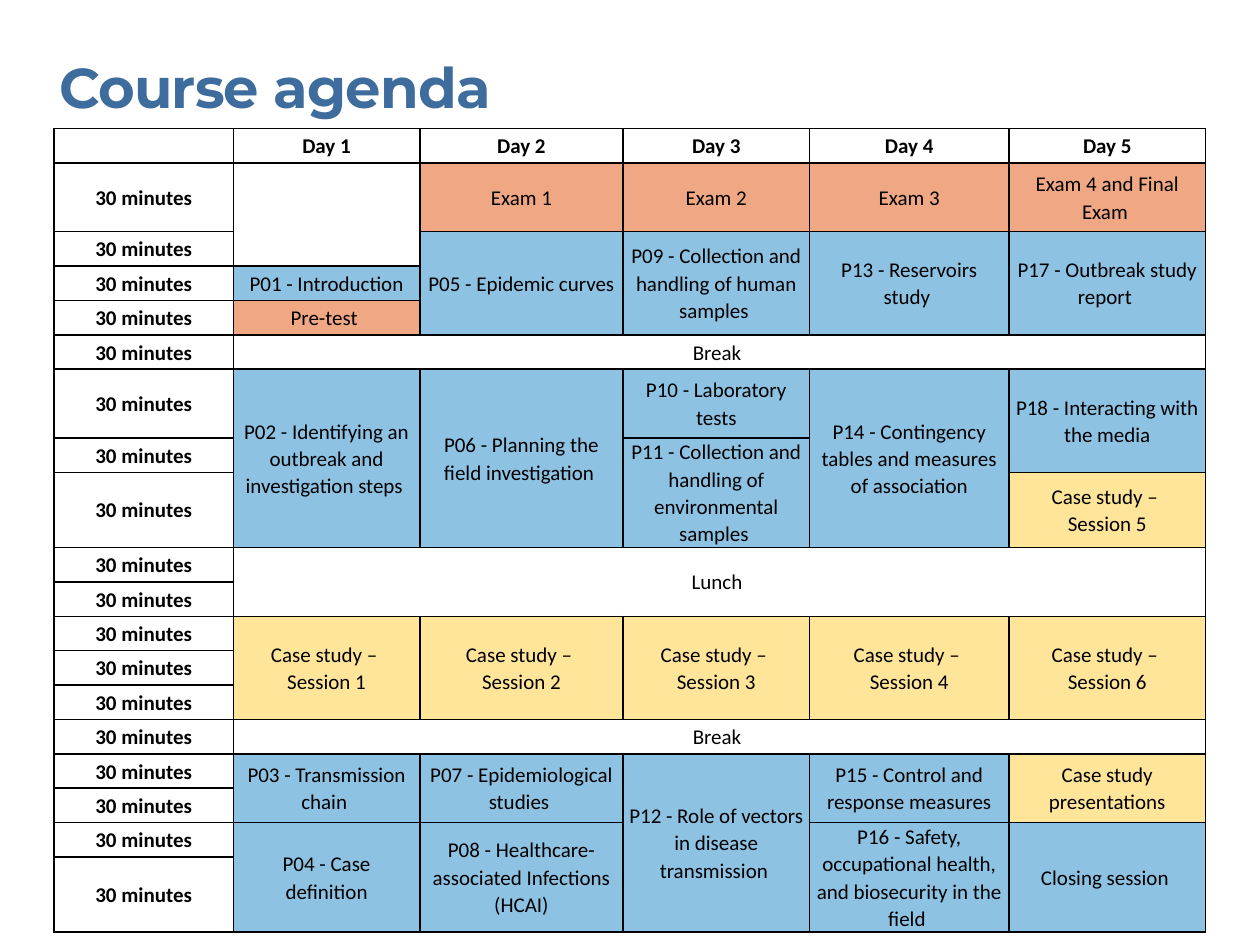
from lxml import etree
from pptx import Presentation
from pptx.dml.color import RGBColor
from pptx.enum.text import MSO_ANCHOR, PP_ALIGN
from pptx.oxml.ns import qn
from pptx.util import Inches, Pt

LEFT, CENTER = PP_ALIGN.LEFT, PP_ALIGN.CENTER
TOP, MIDDLE = MSO_ANCHOR.TOP, MSO_ANCHOR.MIDDLE
TITLE_ONLY = 5

BLACK, WHITE, TITLE_BLUE = "000000", "FFFFFF", "3D6C9D"
EXAM, LESSON, CASE = "F0A884", "8DC2E3", "FFE599"

TITLE_BOX = (0.47, 0.42, 8.55, 0.54)
TABLE_BOX = (0.43, 1.02, 9.14, 6.08)
COLUMN_SHARES = [1.42, 1.48, 1.61, 1.48, 1.58, 1.56]
ROW_SHARES = [1, 2, 1, 1, 1, 1, 2, 1, 2] + [1] * 9 + [1.28]
SLOT = "30 minutes"

MORNING = [
    [(2, None, ""), (1, LESSON, "P01 - Introduction"), (1, EXAM, "Pre-test ")],
    [(1, EXAM, "Exam 1"), (3, LESSON, "P05 - Epidemic curves")],
    [(1, EXAM, "Exam 2"), (3, LESSON, "P09 - Collection and handling of human samples ")],
    [(1, EXAM, "Exam 3"), (3, LESSON, "P13 - Reservoirs study ")],
    [(1, EXAM, "Exam 4 and Final Exam "), (3, LESSON, "P17 - Outbreak study report ")],
]
LATE_MORNING = [
    [(3, LESSON, "P02 - Identifying an outbreak and investigation steps ")],
    [(3, LESSON, "P06 - Planning the field investigation ")],
    [(1, LESSON, "P10 - Laboratory tests"),
     (2, LESSON, "P11 - Collection and handling of environmental samples ")],
    [(3, LESSON, "P14 - Contingency tables and measures of association")],
    [(2, LESSON, "P18 - Interacting with the media"),
     (1, CASE, "Case study – \nSession 5")],
]
CASE_STUDIES = [[(3, CASE, f"Case study – \nSession {number}")] for number in (1, 2, 3, 4, 6)]
LATE_AFTERNOON = [
    [(2, LESSON, "P03 - Transmission chain "), (2, LESSON, "P04 - Case definition")],
    [(2, LESSON, "P07 - Epidemiological studies "),
     (2, LESSON, "P08 - Healthcare-associated Infections (HCAI)")],
    [(4, LESSON, "P12 - Role of vectors in disease transmission ")],
    [(2, LESSON, "P15 - Control and response measures"),
     (2, LESSON, "P16 - Safety, occupational health, and biosecurity in the field ")],
    [(2, CASE, "Case study presentations"), (2, LESSON, "Closing session ")],
]
BLOCKS = [
    MORNING,
    [[(1, None, "Break ")]],
    LATE_MORNING,
    [[(2, None, "Lunch ")]],
    CASE_STUDIES,
    [[(1, None, "Break ")]],
    LATE_AFTERNOON,
]


def color(value):
    """Turn a hex string into a colour."""
    return RGBColor.from_string(value)


def write_text(frame, text, font="Calibri", size=12, bold=False, fill=BLACK,
               align=CENTER, line_spacing=1.07, tracking=None):
    """Write text into a frame, one paragraph for each line."""
    for index, line in enumerate(text.split("\n")):
        paragraph = frame.add_paragraph() if index else frame.paragraphs[0]
        paragraph.alignment = align
        paragraph.line_spacing = line_spacing
        if not line:
            continue
        run = paragraph.add_run()
        run.text = line
        run.font.name = font
        run.font.size = Pt(size)
        run.font.bold = bold
        run.font.color.rgb = color(fill)
        if tracking is not None:
            run.font._element.set("spc", str(int(tracking * 100)))


def place_title(slide, box):
    """Move the title placeholder into its box and format it."""
    title = slide.shapes.title
    title.left, title.top, title.width, title.height = map(Inches, box)
    frame = title.text_frame
    frame.margin_left = frame.margin_right = frame.margin_top = frame.margin_bottom = 0
    frame.vertical_anchor = TOP
    frame.word_wrap = True
    write_text(frame, "Course agenda", font="Montserrat", size=32, bold=True,
               fill=TITLE_BLUE, align=LEFT, line_spacing=1.0, tracking=-0.5)


def format_cell(cell):
    """Give a cell its margins, anchor, empty-text size and black borders."""
    cell.margin_left = cell.margin_right = Inches(0.05)
    cell.margin_top = cell.margin_bottom = 0
    cell.vertical_anchor = MIDDLE
    cell.text_frame.paragraphs[0]._p.get_or_add_endParaRPr().set("sz", "1200")
    properties = cell._tc.get_or_add_tcPr()
    for side in ("a:lnL", "a:lnR", "a:lnT", "a:lnB"):
        line = etree.SubElement(properties, qn(side), w=str(Pt(1)))
        solid = etree.SubElement(line, qn("a:solidFill"))
        etree.SubElement(solid, qn("a:srgbClr"), val=BLACK)
    cell.fill.background()


def fill_cell(cell, text, fill=None, bold=False):
    """Write a cell's text and set its fill."""
    write_text(cell.text_frame, text, bold=bold)
    if fill:
        cell.fill.solid()
        cell.fill.fore_color.rgb = color(fill)


def place_block(table, top_row, block):
    """Fill one block of sessions, a lone column spanning all days, and return the next row."""
    day_count = len(table.columns) - 1
    width = day_count // len(block)
    for day, sessions in enumerate(block):
        row, column = top_row, 1 + day
        for height, fill, text in sessions:
            cell = table.cell(row, column)
            if height * width > 1:
                cell.merge(table.cell(row + height - 1, column + width - 1))
            fill_cell(cell, text, fill)
            row += height
    return row


def place_agenda(slide, box):
    """Build the agenda table inside its box."""
    left, top, width, height = map(Inches, box)
    table = slide.shapes.add_table(len(ROW_SHARES), len(COLUMN_SHARES),
                                   left, top, width, height).table
    table.first_row = table.horz_banding = False
    for column, share in zip(table.columns, COLUMN_SHARES):
        column.width = int(width * share / sum(COLUMN_SHARES))
    for row, share in zip(table.rows, ROW_SHARES):
        row.height = int(height * share / sum(ROW_SHARES))
    for cell in table.iter_cells():
        format_cell(cell)
    for column in range(len(COLUMN_SHARES)):
        heading = f"Day {column}" if column else ""
        fill_cell(table.cell(0, column), heading, WHITE, bold=True)
    for row in range(1, len(ROW_SHARES)):
        fill_cell(table.cell(row, 0), SLOT, bold=True)
    next_row = 1
    for block in BLOCKS:
        next_row = place_block(table, next_row, block)


def main():
    """Build and save the course agenda slide."""
    presentation = Presentation()
    presentation.slide_width, presentation.slide_height = Inches(10), Inches(7.5)
    slide = presentation.slides.add_slide(presentation.slide_layouts[TITLE_ONLY])
    place_title(slide, TITLE_BOX)
    place_agenda(slide, TABLE_BOX)
    presentation.save("out.pptx")


if __name__ == "__main__":
    main()
